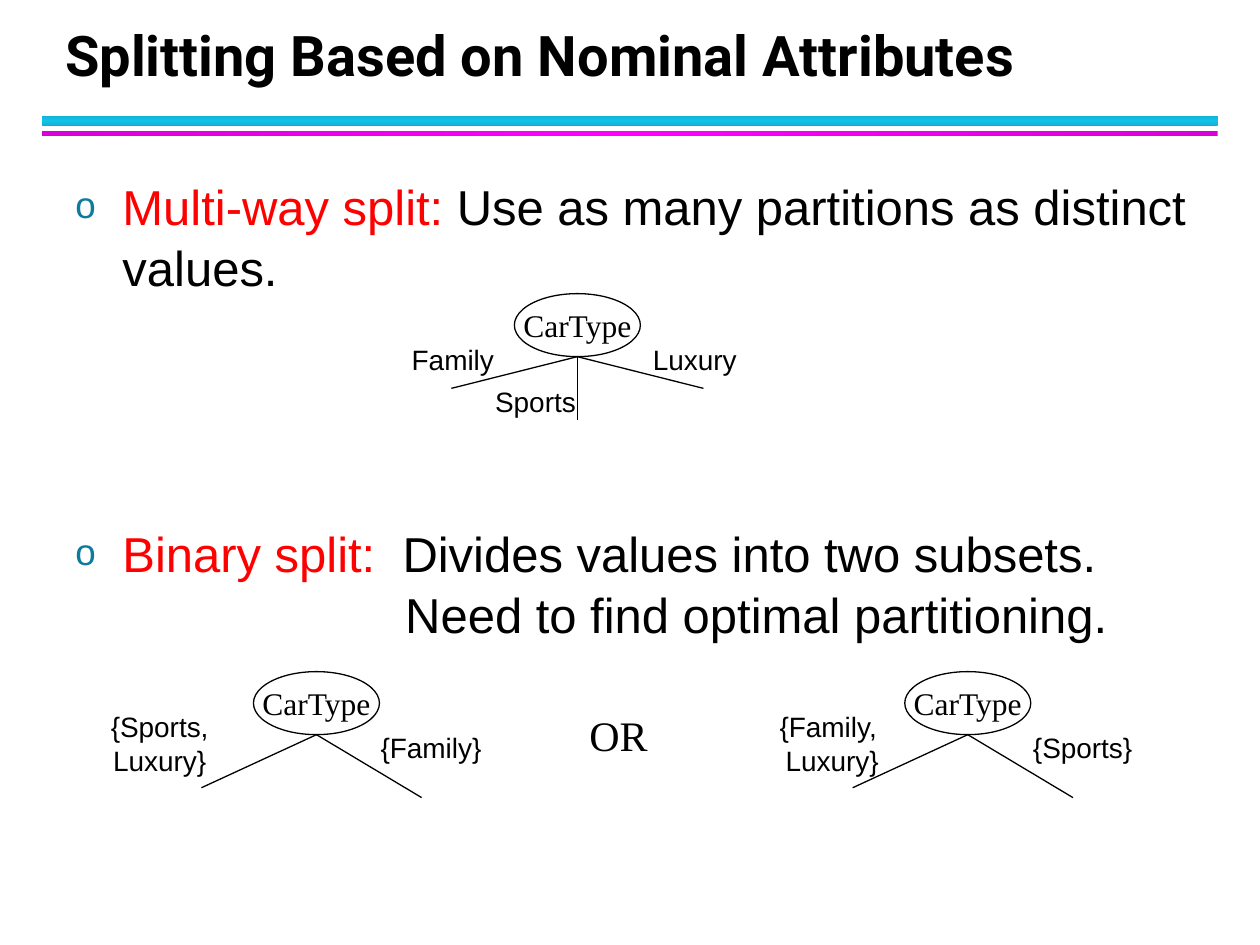
from lxml import etree
from copy import deepcopy
from pptx import Presentation
from pptx.dml.color import RGBColor
from pptx.enum.shapes import MSO_CONNECTOR, MSO_SHAPE
from pptx.enum.text import MSO_ANCHOR, MSO_AUTO_SIZE, PP_ALIGN
from pptx.oxml.ns import qn
from pptx.util import Cm, Pt

BLACK = RGBColor(0x00, 0x00, 0x00)
WHITE = RGBColor(0xFF, 0xFF, 0xFF)
RED = RGBColor(0xFF, 0x00, 0x00)
CYAN = RGBColor(0x12, 0xC2, 0xE9)
DARK_CYAN = RGBColor(0x10, 0xB0, 0xD3)
MAGENTA = RGBColor(0xFF, 0x00, 0xFF)
DARK_MAGENTA = RGBColor(0xDA, 0x00, 0xDA)


def write_centred(shape, text, font, size):
    frame = shape.text_frame
    frame.text = text
    frame.word_wrap = False
    frame.vertical_anchor = MSO_ANCHOR.MIDDLE
    for para in frame.paragraphs:
        para.alignment = PP_ALIGN.CENTER
        para.font.name = font
        para.font.size = Pt(size)
        para.font.color.rgb = BLACK


def set_indent(para, left, first, bullet=None):
    props = para._p.get_or_add_pPr()
    props.set("marL", str(Cm(left)))
    props.set("indent", str(Cm(first)))
    if bullet is None:
        etree.SubElement(props, qn("a:buNone"))
        return
    colour = etree.SubElement(props, qn("a:buClr"))
    etree.SubElement(colour, qn("a:srgbClr"), val="0C7B9C")
    etree.SubElement(props, qn("a:buSzPct"), val="75000")
    etree.SubElement(props, qn("a:buFont"), typeface="Arial")
    etree.SubElement(props, qn("a:buChar"), char=bullet)


deck = Presentation()
deck.slide_width, deck.slide_height = Cm(25.4), Cm(19.05)
page = deck.slides.add_slide(deck.slide_layouts[5])
shapes = page.shapes

# Two gradient rules under the title
for top, height, edge, middle, angle in [
    (2.33, 0.21, DARK_CYAN, CYAN, 90),
    (2.64, 0.1, DARK_MAGENTA, MAGENTA, 0),
]:
    rule = shapes.add_shape(MSO_SHAPE.RECTANGLE, Cm(0.85), Cm(top), Cm(23.7), Cm(height))
    rule.shadow.inherit = False
    rule.line.fill.background()
    rule.fill.gradient()
    rule.fill.gradient_angle = angle
    stop_list = rule._element.spPr.find(".//" + qn("a:gsLst"))
    stop_list.insert(1, deepcopy(stop_list[0]))
    for stop, colour, position in zip(rule.fill.gradient_stops, (edge, middle, edge), (0, 0.5, 1)):
        stop.color.rgb = colour
        stop.position = position

# Title
title = shapes.title
title.left, title.top, title.width, title.height = Cm(1.06), Cm(0.42), Cm(23.92), Cm(1.48)
title.text_frame.text = "Splitting Based on Nominal Attributes"
title.text_frame.auto_size = MSO_AUTO_SIZE.NONE
title.text_frame.vertical_anchor = MSO_ANCHOR.BOTTOM
para = title.text_frame.paragraphs[0]
para.alignment = PP_ALIGN.LEFT
para.line_spacing = Pt(36)
para.font.name = "Roboto"
para.font.size = Pt(32)
para.font.bold = True
para.font.color.rgb = BLACK

# Body: term, explanation, space before, left margin, first-line indent, bullet
body = shapes.add_textbox(Cm(1.27), Cm(3.39), Cm(23.28), Cm(10.37)).text_frame
body.word_wrap = True
for number, (term, explanation, before, left, first, bullet) in enumerate([
    ("Multi-way split:", " Use as many partitions as distinct values.", 3, 0.95, -0.95, "o"),
    ("Binary split:", "  Divides values into two subsets.", 128, 0.95, -0.95, "o"),
    ("", "Need to find optimal partitioning.", 0, 6.65, 0, None),
]):
    para = body.add_paragraph() if number else body.paragraphs[0]
    para.line_spacing = 1.04
    para.space_before = Pt(before)
    para.space_after = Pt(0)
    para.font.name = "Arial"
    para.font.size = Pt(28)
    set_indent(para, left, first, bullet)
    for text, colour in ((term, RED), (explanation, BLACK)):
        if text:
            span = para.add_run()
            span.text = text
            span.font.color.rgb = colour

# Trees: node corner, branch ends from the foot of the node, labels with their boxes
NODE_WIDTH, NODE_HEIGHT = 2.54, 1.27
THREE_WAY = [(-2.54, 0.64), (0, 1.27), (2.54, 0.64)]
TWO_WAY = [(-2.32, 1.07), (2.12, 1.27)]
trees = [
    (10.37, 5.92, THREE_WAY, [
        ("Family", 8.05, 6.78, 2.16, 0.94),
        ("Sports", 9.73, 7.62, 2.13, 0.94),
        ("Luxury", 12.9, 6.78, 2.21, 0.94),
    ]),
    (18.24, 13.54, TWO_WAY, [
        ("{Family, \nLuxury}", 15.44, 14.17, 2.67, 1.63),
        ("{Sports}", 20.57, 14.6, 2.51, 0.94),
    ]),
    (5.11, 13.54, TWO_WAY, [
        ("{Sports,\nLuxury}", 1.91, 14.17, 2.62, 1.63),
        ("{Family}", 7.42, 14.6, 2.54, 0.94),
    ]),
]
for left, top, branches, labels in trees:
    node = shapes.add_shape(MSO_SHAPE.OVAL, Cm(left), Cm(top), Cm(NODE_WIDTH), Cm(NODE_HEIGHT))
    node.shadow.inherit = False
    node.fill.solid()
    node.fill.fore_color.rgb = WHITE
    node.line.color.rgb = BLACK
    node.line.width = Pt(0.75)
    write_centred(node, "CarType", "Times New Roman", 18)

    foot_x, foot_y = left + NODE_WIDTH / 2, top + NODE_HEIGHT
    for across, down in branches:
        branch = shapes.add_connector(
            MSO_CONNECTOR.STRAIGHT, Cm(foot_x), Cm(foot_y), Cm(foot_x + across), Cm(foot_y + down))
        branch.line.color.rgb = BLACK
        branch.line.width = Pt(0.75)
        etree.SubElement(branch._element.spPr, qn("a:effectLst"))

    for text, *bounds in labels:
        write_centred(shapes.add_textbox(*map(Cm, bounds)), text, "Arial", 16)

# Word between the two binary trees
write_centred(shapes.add_textbox(Cm(11.63), Cm(14.17), Cm(1.68), Cm(1.27)), "OR", "Times New Roman", 24)

deck.save("out.pptx")
